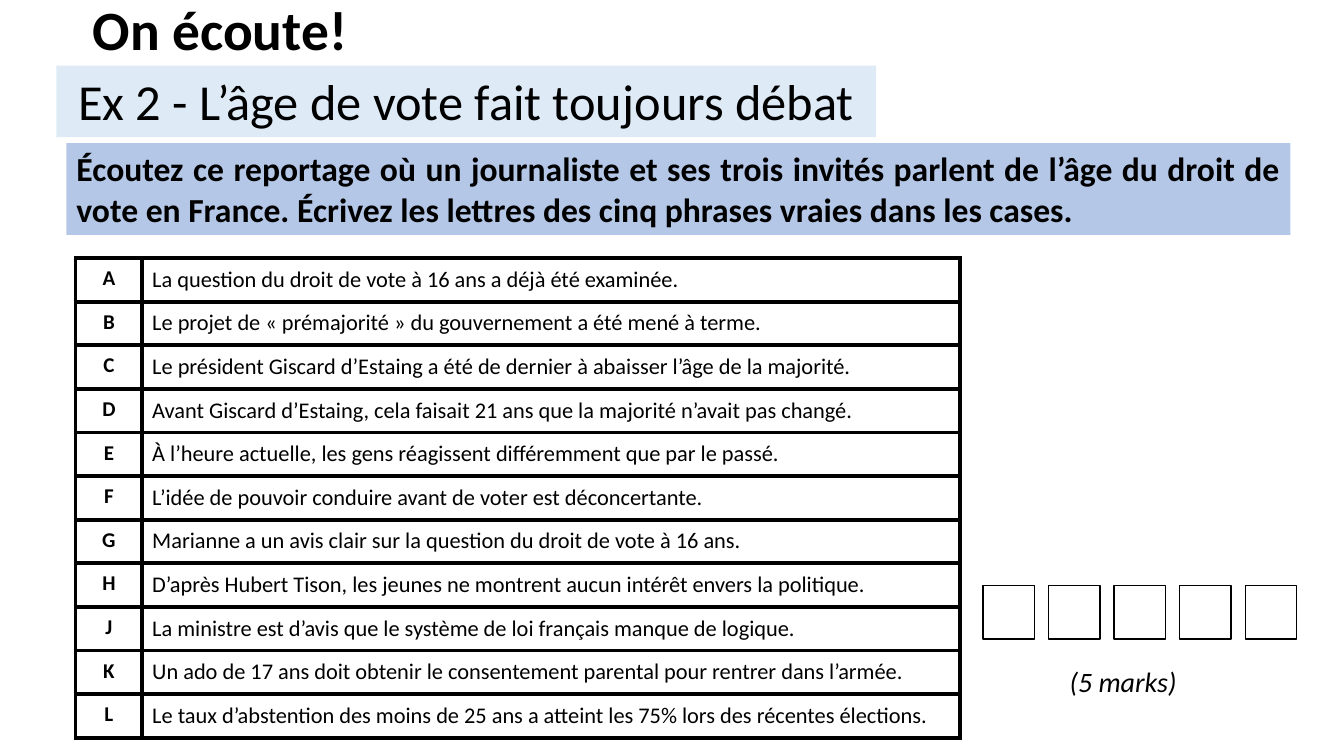
from dataclasses import dataclass, field

from lxml import etree
from pptx import Presentation
from pptx import util as u
from pptx.dml.color import RGBColor
from pptx.enum import shapes, text
from pptx.oxml import ns

PX = 9144  # EMU per px, 100 px to the inch
FONT = "Calibri"
COLOURS = {"ink": "000000", "paper": "FFFFFF", "heading": "DEEBF7", "task": "B4C7E7"}

STATEMENTS = {
    "A": "La question du droit de vote à 16 ans a déjà été examinée.",
    "B": "Le projet de « prémajorité » du gouvernement a été mené à terme.",
    "C": "Le président Giscard d’Estaing a été de dernier à abaisser l’âge de la majorité.",
    "D": "Avant Giscard d’Estaing, cela faisait 21 ans que la majorité n’avait pas changé.",
    "E": "À l’heure actuelle, les gens réagissent différemment que par le passé.",
    "F": "L’idée de pouvoir conduire avant de voter est déconcertante.",
    "G": "Marianne a un avis clair sur la question du droit de vote à 16 ans.",
    "H": "D’après Hubert Tison, les jeunes ne montrent aucun intérêt envers la politique.",
    "J": "La ministre est d’avis que le système de loi français manque de logique.",
    "K": "Un ado de 17 ans doit obtenir le consentement parental pour rentrer dans l’armée.",
    "L": "Le taux d’abstention des moins de 25 ans a atteint les 75% lors des récentes élections.",
}


@dataclass
class Block:
    """A piece of text, on a filled rectangle when it has a fill."""
    words: str
    left: int
    top: int
    width: int
    height: int
    size: float
    fill: str = ""
    font: dict = field(default_factory=dict)
    para: dict = field(default_factory=dict)
    frame: dict = field(default_factory=dict)


BLOCKS = [
    Block("On écoute!", 82, 0, 397, 65, 39.6, font={"bold": True},
          para={"line_spacing": 0.9}, frame={"vertical_anchor": text.MSO_ANCHOR.MIDDLE}),
    Block("Écoutez ce reportage où un journaliste et ses trois invités parlent de l’âge du "
          "droit de vote en France. Écrivez les lettres des cinq phrases vraies dans les cases.",
          66, 142, 1214, 91, 24, "task", {"bold": True},
          {"alignment": text.PP_ALIGN.JUSTIFY}),
    Block("Ex 2 - L’âge de vote fait toujours débat", 56, 65, 813, 71, 36, "heading",
          para={"alignment": text.PP_ALIGN.CENTER}),
    Block("(5 marks)", 1051, 654, 134, 44, 20, font={"italic": True},
          frame={"word_wrap": False}),
]


def colour(name: str) -> RGBColor:
    return RGBColor.from_string(COLOURS[name])


def apply(target, values: dict) -> None:
    for name, value in values.items():
        setattr(target, name, value)


def write(frame, words: str, size: float, font: dict, para_format: dict) -> None:
    para = frame.paragraphs[0]
    apply(para, {"alignment": text.PP_ALIGN.LEFT, **para_format})
    span = para.add_run()
    span.text = words
    apply(span.font, {"name": FONT, "size": u.Pt(size), **font})
    span.font.color.rgb = colour("ink")


def add_rectangle(page, left: int, top: int, width: int, height: int, fill: str):
    box = page.shapes.add_shape(shapes.MSO_SHAPE.RECTANGLE,
                                left * PX, top * PX, width * PX, height * PX)
    box.shadow.inherit = False
    box.fill.solid()
    box.fill.fore_color.rgb = colour(fill)
    box.line.fill.background()
    return box


def add_block(page, block: Block) -> None:
    place = (block.left, block.top, block.width, block.height)
    if block.fill:
        box = add_rectangle(page, *place, block.fill)
    else:
        box = page.shapes.add_textbox(*(length * PX for length in place))
    apply(box.text_frame, {"word_wrap": True, "vertical_anchor": text.MSO_ANCHOR.TOP,
                           **block.frame})
    write(box.text_frame, block.words, block.size, block.font, block.para)


def add_borders(cell, points: int) -> None:
    properties = cell._tc.get_or_add_tcPr()
    for index, side in enumerate(("lnL", "lnR", "lnT", "lnB")):
        line = etree.Element(ns.qn(f"a:{side}"), w=str(u.Pt(points)))
        fill = etree.SubElement(line, ns.qn("a:solidFill"))
        etree.SubElement(fill, ns.qn("a:srgbClr"), val=COLOURS["ink"])
        properties.insert(index, line)


def add_statements(page) -> None:
    left, top, height, widths = 75, 256, 476, (66, 811)
    table = page.shapes.add_table(len(STATEMENTS), len(widths), left * PX, top * PX,
                                  sum(widths) * PX, height * PX).table
    apply(table, {"first_row": False, "horz_banding": False})
    for column, width in zip(table.columns, widths):
        column.width = width * PX
    letter_format = (15, {"bold": True},
                     {"alignment": text.PP_ALIGN.CENTER, "line_spacing": 1.1})
    sentence_format = (16, {"bold": False}, {"line_spacing": 1.1})
    for row, entry in zip(table.rows, STATEMENTS.items()):
        for cell, words, style in zip(row.cells, entry, (letter_format, sentence_format)):
            cell.fill.background()
            add_borders(cell, 3)
            write(cell.text_frame, words, *style)


def add_answer_boxes(page) -> None:
    left, top, width, height, pitch, count = 975, 581, 51, 53, 65, 5
    for index in range(count):
        box = add_rectangle(page, left + index * pitch, top, width, height, "paper")
        box.line.color.rgb = colour("ink")
        box.line.width = u.Pt(1)


def main() -> None:
    deck = Presentation()
    apply(deck, {"slide_width": 1333 * PX, "slide_height": 750 * PX})
    page = deck.slides.add_slide(deck.slide_layouts[6])

    # Title, task and heading
    *headings, marks = BLOCKS
    for block in headings:
        add_block(page, block)

    # Statements and the boxes for the answers
    add_statements(page)
    add_answer_boxes(page)
    add_block(page, marks)

    deck.save("out.pptx")


if __name__ == "__main__":
    main()
